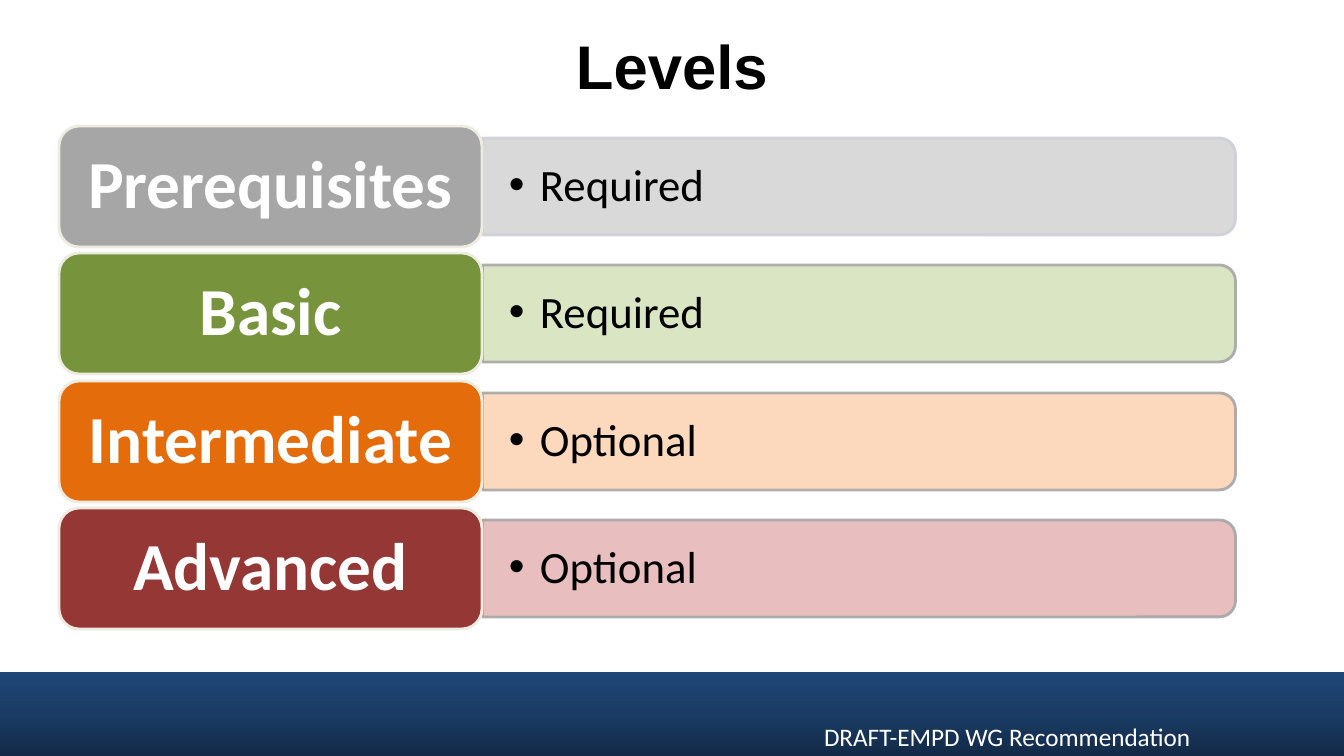
from copy import deepcopy

from lxml.etree import SubElement
from pptx import Presentation
from pptx.dml.color import RGBColor
from pptx.enum.shapes import MSO_SHAPE as Preset
from pptx.enum.text import MSO_ANCHOR as Anchor, PP_ALIGN as Align
from pptx.oxml.ns import qn
from pptx.util import Pt

PX = 914400 / 100.8
TITLE_ONLY = 5
ROW_TOP, ROW_PITCH = 126, 382 / 3
LABEL_HEIGHT = 121

# Label, requirement, label colour, bar colour, bar outline, bar opacity
LEVELS = [
    ("Prerequisites", "Required", "A6A6A6", "D9D9D9", "CDD0D7", 100),
    ("Basic", "Required", "77933C", "D7E4BD", "A6A6A6", 90),
    ("Intermediate", "Optional", "E46C0A", "FCD5B5", "A6A6A6", 90),
    ("Advanced", "Optional", "953735", "E6B9B8", "A6A6A6", 90),
]


def px(length):
    return round(length * PX)


def colour(value):
    return RGBColor.from_string(value)


def set_opacity(fill_owner, percent):
    """Set the opacity of the solid fill found directly in an element."""
    hue = fill_owner.find(qn("a:solidFill"))[0]
    SubElement(hue, qn("a:alpha"), val=str(percent * 1000))


def write_text(box, text, size, hue, margins, align=Align.LEFT,
               anchor=Anchor.MIDDLE, name="Calibri", bold=False, spacing=1.0):
    frame = box.text_frame
    frame.word_wrap = True
    frame.vertical_anchor = anchor
    across, down = map(px, margins)
    sides = {"margin_left": across, "margin_right": across,
             "margin_top": down, "margin_bottom": down}
    for key, value in sides.items():
        setattr(frame, key, value)
    para = frame.paragraphs[0]
    para.alignment = align
    para.line_spacing = spacing
    span = para.add_run()
    span.text = text
    for key, value in {"size": Pt(size), "name": name, "bold": bold}.items():
        setattr(span.font, key, value)
    span.font.color.rgb = colour(hue)
    return para


def add_text(page, left, top, width, height, *args, **formats):
    box = page.shapes.add_textbox(*map(px, (left, top, width, height)))
    return write_text(box, *args, **formats)


def add_panel(page, preset, left, top, width, height, fill, line):
    panel = page.shapes.add_shape(preset, *map(px, (left, top, width, height)))
    panel.shadow.inherit = False
    panel.fill.solid()
    panel.fill.fore_color.rgb = colour(fill)
    panel.line.color.rgb = colour(line)
    panel.line.width = Pt(2)
    return panel


def add_bullet(para, indent):
    props = para._p.get_or_add_pPr()
    props.set("marL", str(px(indent)))
    props.set("indent", str(-px(indent)))
    SubElement(props, qn("a:buFont"), typeface="Arial")
    SubElement(props, qn("a:buChar"), char="•")


def add_footer_band(page):
    band = page.shapes.add_shape(Preset.RECTANGLE, 0, px(672), px(1344), px(84))
    band.shadow.inherit = False
    band.line.fill.background()
    band.fill.gradient()
    band.fill.gradient_angle = 90
    stops = band.fill._fill._gradFill.find(qn("a:gsLst"))
    stops.insert(1, deepcopy(stops[0]))
    shades = [(0, "122A47"), (0.5, "1A3C65"), (1, "1F4778")]
    for stop, (position, shade) in zip(band.fill.gradient_stops, shades):
        stop.position = position
        stop.color.rgb = colour(shade)


def add_level(page, top, label, need, label_fill, bar_fill, bar_line, opacity):
    # Bar rounded on its right end: an upright shape turned by 90 degrees
    length, depth = 753, 97
    middle_x, middle_y = 859, top + LABEL_HEIGHT / 2
    bar = add_panel(page, Preset.ROUND_2_SAME_RECTANGLE, middle_x - depth / 2,
                    middle_y - length / 2, depth, length, bar_fill, bar_line)
    bar.rotation = 90
    set_opacity(bar._element.spPr, opacity)
    set_opacity(bar.line._ln, 90)
    para = add_text(page, 482, top + 17, 748, 88, need, 32, "000000", (27, 14),
                    spacing=0.9)
    add_bullet(para, 31)
    # Label over the left end of the bar
    box = add_panel(page, Preset.ROUNDED_RECTANGLE, 59, top, 423, LABEL_HEIGHT,
                    label_fill, "EEECE1")
    write_text(box, label, 48, "FFFFFF", (20, 10), align=Align.CENTER,
               bold=True, spacing=0.9)


def main():
    deck = Presentation()
    deck.slide_width, deck.slide_height = px(1344), px(756)
    page = deck.slides.add_slide(deck.slide_layouts[TITLE_ONLY])

    add_footer_band(page)

    # Title
    title = page.shapes.title
    place = {"left": 67, "top": 17, "width": 1210, "height": 96}
    for key, value in place.items():
        setattr(title, key, px(value))
    write_text(title, "Levels", 44, "000000", (10, 5), align=Align.CENTER,
               name="Arial", bold=True)

    # Levels
    for row, level in enumerate(LEVELS):
        add_level(page, ROW_TOP + round(row * ROW_PITCH), *level)

    # Footer note
    add_text(page, 814, 716, 520, 40, "DRAFT-EMPD WG Recommendation", 18,
             "FFFFFF", (10, 5), anchor=Anchor.TOP)
    deck.save("out.pptx")


if __name__ == "__main__":
    main()
